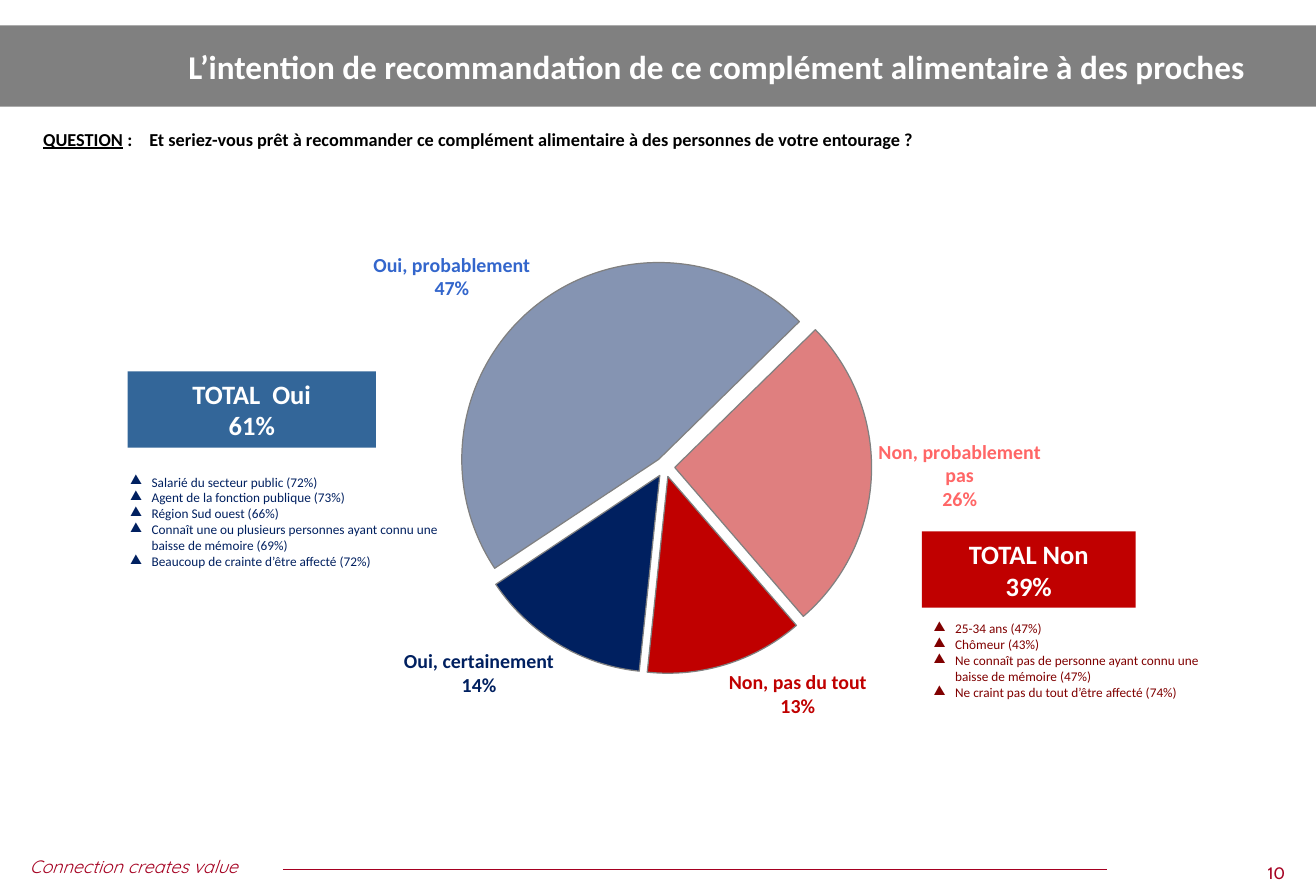
from collections import namedtuple

from lxml import etree
from pptx import Presentation, util as u
from pptx.chart.data import CategoryChartData
from pptx.dml.color import RGBColor
from pptx.enum import chart as charts, shapes, text
from pptx.oxml import parse_xml
from pptx.oxml.ns import nsdecls, qn

WIDTH, HEIGHT = u.Inches(11.02), u.Inches(7.48)
FONT = "Calibri"
WHITE = RGBColor(0xFF, 0xFF, 0xFF)
BLACK = RGBColor(0x00, 0x00, 0x00)
GREY = RGBColor(0x80, 0x80, 0x80)
CRIMSON = RGBColor(0xA5, 0x00, 0x21)
NAVY = RGBColor(0x00, 0x20, 0x60)
STEEL = RGBColor(0x33, 0x66, 0x99)
BLUE = RGBColor(0x33, 0x66, 0xCC)
RED = RGBColor(0xC0, 0x00, 0x00)
PINK = RGBColor(0xFF, 0x66, 0x66)
MAROON = RGBColor(0x80, 0x00, 0x00)

# Shares of the slide's size, in percent
Box = namedtuple("Box", "left top width height")
Answer = namedtuple("Answer", "label share fill opacity label_color")

ANSWERS = [
    Answer("Oui, certainement", 0.14, NAVY, 100, NAVY),
    Answer("Oui, probablement", 0.47, NAVY, 48, BLUE),
    Answer("Non, probablement pas", 0.26, RED, 50, PINK),
    Answer("Non, pas du tout", 0.13, RED, 100, RED),
]
YES_PROFILE = [
    "Salarié du secteur public (72%)",
    "Agent de la fonction publique (73%)",
    "Région Sud ouest (66%)",
    "Connaît une ou plusieurs personnes ayant connu une baisse de mémoire (69%)",
    "Beaucoup de crainte d’être affecté (72%)",
]
NO_PROFILE = [
    "25-34 ans (47%)",
    "Chômeur (43%)",
    "Ne connaît pas de personne ayant connu une baisse de mémoire (47%)",
    "Ne craint pas du tout d’être affecté (74%)",
]


def across(share):
    return round(WIDTH * share / 100)


def down(share):
    return round(HEIGHT * share / 100)


def place(box):
    return across(box.left), down(box.top), across(box.width), down(box.height)


def style(font, size, color, bold=False, name=FONT):
    font.name, font.size, font.bold = name, u.Pt(size), bold
    font.color.rgb = color


def hang(paragraph, inches):
    """Give the paragraph a hanging indent."""
    properties = paragraph._p.get_or_add_pPr()
    properties.set("marL", str(u.Inches(inches)))
    properties.set("indent", str(-u.Inches(inches)))
    return properties


def add_block(slide, box, fill):
    block = slide.shapes.add_shape(shapes.MSO_SHAPE.RECTANGLE, *place(box))
    block.shadow.inherit = False
    block.fill.solid()
    block.fill.fore_color.rgb = fill
    block.line.fill.background()
    return block


def add_text(slide, box, words):
    frame = slide.shapes.add_textbox(*place(box)).text_frame
    frame.word_wrap = True
    frame.text = words
    return frame


def add_banner(slide, box, title):
    add_block(slide, box, GREY)
    indent = 13.43
    frame = add_text(slide, box._replace(left=box.left + indent, width=box.width - indent), title)
    frame.vertical_anchor = text.MSO_ANCHOR.MIDDLE
    style(frame.paragraphs[0].runs[0].font, 20, WHITE, bold=True)


def add_question(slide, box, words):
    table = slide.shapes.add_table(2, 1, *place(box)).table
    table.first_row = table.horz_banding = False
    for cell in table.iter_cells():
        cell.fill.background()
        cell.vertical_anchor = text.MSO_ANCHOR.MIDDLE
        cell.text_frame.paragraphs[0].font.size = u.Pt(11)
    paragraph = table.cell(0, 0).text_frame.paragraphs[0]
    paragraph.alignment = text.PP_ALIGN.JUSTIFY
    hang(paragraph, 0.89)
    for part in ("QUESTION", " :\t" + words):
        run = paragraph.add_run()
        run.text = part
        style(run.font, 11, BLACK, bold=True)
    paragraph.runs[0].font.underline = True


def add_total(slide, box, words, fill):
    frame = add_block(slide, box, fill).text_frame
    frame.text = words
    for paragraph in frame.paragraphs:
        paragraph.alignment = text.PP_ALIGN.CENTER
        style(paragraph.runs[0].font, 16, WHITE, bold=True)


def add_profile(slide, box, groups, color):
    frame = add_text(slide, box, "\n".join(groups))
    for paragraph in frame.paragraphs:
        etree.SubElement(hang(paragraph, 0.18), qn("a:buChar")).set("char", "▲")
        style(paragraph.runs[0].font, 8, color)


def add_answer_slice(point, answer):
    point.format.fill.solid()
    point.format.fill.fore_color.rgb = answer.fill
    if answer.opacity < 100:
        color = point.format.fill._xPr.find(".//" + qn("a:srgbClr"))
        etree.SubElement(color, qn("a:alpha")).set("val", str(answer.opacity * 1000))
    point.format.line.color.rgb = GREY
    point.format.line.width = u.Pt(0.75)

    label = point.data_label
    style(label.font, 12, answer.label_color, bold=True)
    label.position = charts.XL_LABEL_POSITION.OUTSIDE_END
    element = label._dLbl
    element.find(qn("c:showCatName")).set("val", "1")
    element.find(qn("c:showPercent")).set("val", "0")
    etree.SubElement(element, qn("c:separator")).text = "\n"


def add_pie(slide, box):
    data = CategoryChartData(number_format="0%")
    data.categories = [answer.label for answer in ANSWERS]
    data.add_series("Series 1", [answer.share for answer in ANSWERS])
    chart = slide.shapes.add_chart(charts.XL_CHART_TYPE.PIE, *place(box), data).chart
    chart.has_legend = chart.has_title = False
    style(chart.font, 18, BLACK, name="DejaVu Sans")

    plot = chart.plots[0]
    plot.vary_by_categories = True
    series = plot.series[0]
    for index, answer in enumerate(ANSWERS):
        add_answer_slice(series.points[index], answer)
    series._element.find(qn("c:dPt")).addprevious(
        parse_xml(f'<c:explosion {nsdecls("c")} val="5"/>'))

    pie = plot._element
    for old in pie.findall(qn("c:firstSliceAng")):
        pie.remove(old)
    etree.SubElement(pie, qn("c:firstSliceAng")).set("val", "186")

    area = pie.getparent()
    for old in area.findall(qn("c:layout")):
        area.remove(old)
    area.insert(0, parse_xml(
        f'<c:layout {nsdecls("c")}><c:manualLayout><c:layoutTarget val="inner"/>'
        '<c:xMode val="edge"/><c:yMode val="edge"/><c:x val="0.214"/><c:y val="0.096"/>'
        '<c:w val="0.502"/><c:h val="0.729"/></c:manualLayout></c:layout>'))


def add_footer(slide, box, tagline, number):
    frame = add_text(slide, box._replace(left=box.left + 1.36, width=28.3), tagline)
    font = frame.paragraphs[0].runs[0].font
    style(font, 10.8, CRIMSON, name="Quicksand")
    font.italic = True

    middle = down(box.top + 2.13)
    rule = slide.shapes.add_connector(
        shapes.MSO_CONNECTOR.STRAIGHT,
        across(box.left + 21.5), middle, across(box.left + 84.12), middle)
    rule.line.color.rgb = CRIMSON
    rule.line.width = u.Pt(0.75)
    etree.SubElement(rule._element.spPr, qn("a:effectLst"))

    frame = add_text(slide, Box(box.left + 94, box.top + 0.8, 6, 3.6), number)
    frame.paragraphs[0].alignment = text.PP_ALIGN.CENTER
    style(frame.paragraphs[0].runs[0].font, 10, CRIMSON, name="Cabin")


def main():
    presentation = Presentation()
    presentation.slide_width, presentation.slide_height = WIDTH, HEIGHT
    slide = presentation.slides.add_slide(presentation.slide_layouts[6])
    add_banner(slide, Box(0, 2.85, 100, 9.1),
               "L’intention de recommandation de ce complément alimentaire à des proches")
    add_question(slide, Box(2.36, 13.77, 95.64, 7.49),
                 "Et seriez-vous prêt à recommander ce complément alimentaire "
                 "à des personnes de votre entourage ?")
    add_pie(slide, Box(21.42, 23, 62.6, 63.64))
    add_total(slide, Box(9.7, 41.58, 18.87, 8.56), "TOTAL  Oui\n61%", STEEL)
    add_profile(slide, Box(9, 52.4, 26.3, 12.17), YES_PROFILE, NAVY)
    add_total(slide, Box(70.05, 59.5, 16.24, 8.56), "TOTAL Non\n39%", RED)
    add_profile(slide, Box(70.05, 68.85, 23.6, 10.3), NO_PROFILE, MAROON)
    add_footer(slide, Box(0, 95.2, 100, 4.55), "Connection creates value", "10")
    presentation.save("out.pptx")


if __name__ == "__main__":
    main()
